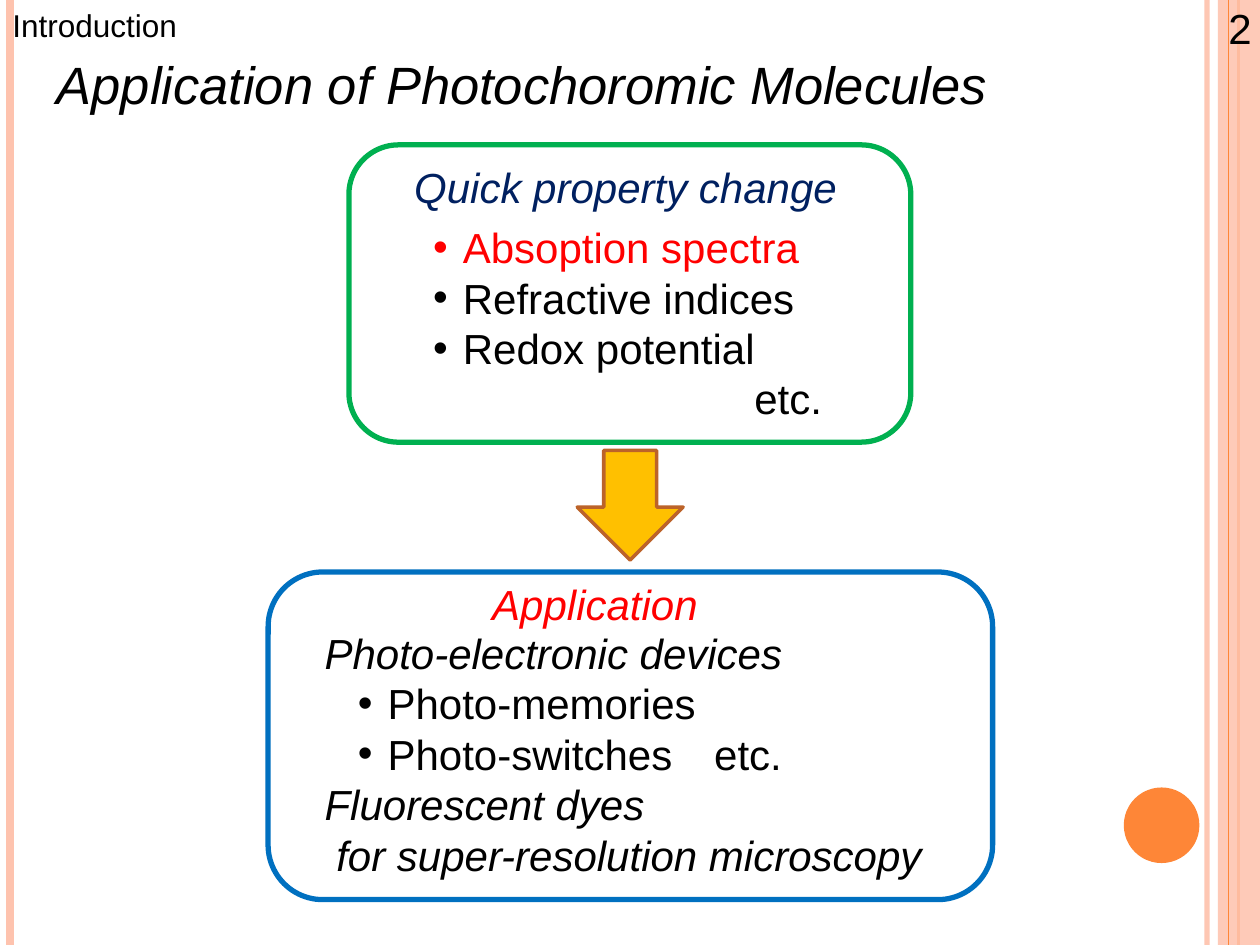
from lxml.etree import SubElement
from pptx import Presentation
from pptx.dml.color import RGBColor
from pptx.enum.shapes import MSO_CONNECTOR as Connector, MSO_SHAPE as Shape
from pptx.enum.text import MSO_ANCHOR as Anchor, MSO_AUTO_SIZE as AutoSize, PP_ALIGN as Align
from pptx.oxml.ns import qn
from pptx.util import Pt

BLACK, RED, NAVY = "000000", "FF0000", "002060"
ORANGE, PEACH = "FE8637", "FEC3AE"
ITALIC = {"italic": True}


def color(value):
    return RGBColor.from_string(value)


def set_alpha(fill_parent, percent):
    for value in fill_parent.iter(qn("a:srgbClr")):
        SubElement(value, qn("a:alpha"), val=str(percent * 1000))


def add_rule(slide, x, width, value, alpha=None):
    rule = slide.shapes.add_connector(Connector.STRAIGHT, Pt(x), Pt(0), Pt(x), Pt(540))
    rule.line.color.rgb = color(value)
    rule.line.width = Pt(width)
    properties = rule._element.spPr
    SubElement(properties, qn("a:effectLst"))
    if alpha:
        set_alpha(properties, alpha)


def add_outlined(shapes, kind, box, fill=None, line=None, width=0):
    shape = shapes.add_shape(kind, *map(Pt, box))
    shape.shadow.inherit = False
    if fill:
        shape.fill.solid()
        shape.fill.fore_color.rgb = color(fill)
    else:
        shape.fill.background()
    if line:
        shape.line.color.rgb = color(line)
        shape.line.width = Pt(width)
    else:
        shape.line.fill.background()
    return shape


def format_paragraph(paragraph, text, value=BLACK, size=24, italic=False,
                     bullet=False, margin=0, hanging=0):
    paragraph.alignment = Align.LEFT
    run = paragraph.add_run()
    run.text = text
    font_format = {"name": "Arial", "size": Pt(size), "bold": False, "italic": italic}
    for name, setting in font_format.items():
        setattr(run.font, name, setting)
    run.font.color.rgb = color(value)
    properties = paragraph._p.get_or_add_pPr()
    properties.set("marL", str(Pt(margin)))
    properties.set("indent", str(Pt(-hanging)))
    if bullet:
        SubElement(properties, qn("a:buFont"), typeface="Arial")
        SubElement(properties, qn("a:buChar"), char="•")
    else:
        SubElement(properties, qn("a:buNone"))


def fill_text(shape, box, lines, wrap=True):
    for name, value in zip(("left", "top", "width", "height"), box):
        setattr(shape, name, Pt(value))
    frame = shape.text_frame
    frame_format = {
        "word_wrap": wrap, "auto_size": AutoSize.SHAPE_TO_FIT_TEXT,
        "vertical_anchor": Anchor.TOP, "margin_left": Pt(7.2), "margin_right": Pt(7.2),
        "margin_top": Pt(3.6), "margin_bottom": Pt(3.6),
    }
    for name, value in frame_format.items():
        setattr(frame, name, value)
    for index, (text, text_format) in enumerate(lines):
        paragraph = frame.add_paragraph() if index else frame.paragraphs[0]
        format_paragraph(paragraph, text, **text_format)


def add_text(shapes, box, lines, wrap=True):
    fill_text(shapes.add_textbox(*map(Pt, box)), box, lines, wrap)


def add_decoration(slide):
    add_rule(slide, 689.8, 3, PEACH, 93)
    add_rule(slide, 5.8, 4.5, PEACH)
    add_rule(slide, 707.8, 1.5, ORANGE)
    band = add_outlined(slide.shapes, Shape.RECTANGLE, (696, 0, 24, 540), PEACH)
    set_alpha(band._element.spPr, 87)
    add_rule(slide, 702, 0.75, ORANGE)
    add_outlined(slide.shapes, Shape.OVAL, (642.2, 450, 43.2, 43.2), ORANGE)


def add_header(slide):
    fill_text(slide.shapes.title, (25.2, 25.9, 550.8, 43.9),
              [("Application of Photochoromic Molecules", {"size": 30, **ITALIC})], wrap=False)
    add_text(slide.shapes, (0, 0, 109.4, 28.8), [("Introduction", {"size": 18})], wrap=False)
    add_text(slide.shapes, (694.8, -2.2, 28.1, 36), [("2", {})], wrap=False)


def add_property_panel(slide, box):
    left, top, width, height = box
    shapes = slide.shapes.add_group_shape().shapes
    add_outlined(shapes, Shape.ROUNDED_RECTANGLE, box, line="00B050", width=3)
    bullet = {"bullet": True, "margin": 17, "hanging": 17}
    add_text(shapes, (left + 30.2, top + 5.8, 260.6, 36),
             [("Quick property change", {"value": NAVY, **ITALIC})])
    add_text(shapes, (left + 41, top + 40.3, 239.8, 123.8), [
        ("Absoption spectra", {"value": RED, **bullet}),
        ("Refractive indices", bullet),
        ("Redox potential", bullet),
        ("etc.", {"margin": 183.6}),
    ])


def add_application_panel(slide, box):
    left, top, width, height = box
    shapes = slide.shapes.add_group_shape().shapes
    add_outlined(shapes, Shape.ROUNDED_RECTANGLE, box, line="0070C0", width=3)
    bullet = {"bullet": True, "margin": 36, "hanging": 17}
    add_text(shapes, (left + 25.2, top + 28.1, 362.2, 152.6), [
        ("Photo-electronic devices", ITALIC),
        ("Photo-memories", bullet),
        ("Photo-switches\t etc.", bullet),
        ("Fluorescent dyes", ITALIC),
        ("for super-resolution microscopy", {"margin": 6.7, **ITALIC}),
    ])
    add_text(shapes, (left + 121, top, 171.4, 36), [("Application", {"value": RED, **ITALIC})])


def add_arrow(slide, box):
    arrow = add_outlined(slide.shapes, Shape.RIGHT_ARROW, box, "FFC000", "BC6329", 2)
    arrow.rotation = 90


def main():
    presentation = Presentation()
    presentation.slide_width, presentation.slide_height = Pt(720), Pt(540)
    slide = presentation.slides.add_slide(presentation.slide_layouts[5])
    add_decoration(slide)
    add_header(slide)
    add_property_panel(slide, (199.4, 82.8, 321.1, 169.9))
    add_arrow(slide, (328.8, 258.5, 62.6, 60.5))
    add_application_panel(slide, (153.2, 326.9, 414, 187.2))
    presentation.save("out.pptx")


if __name__ == "__main__":
    main()
